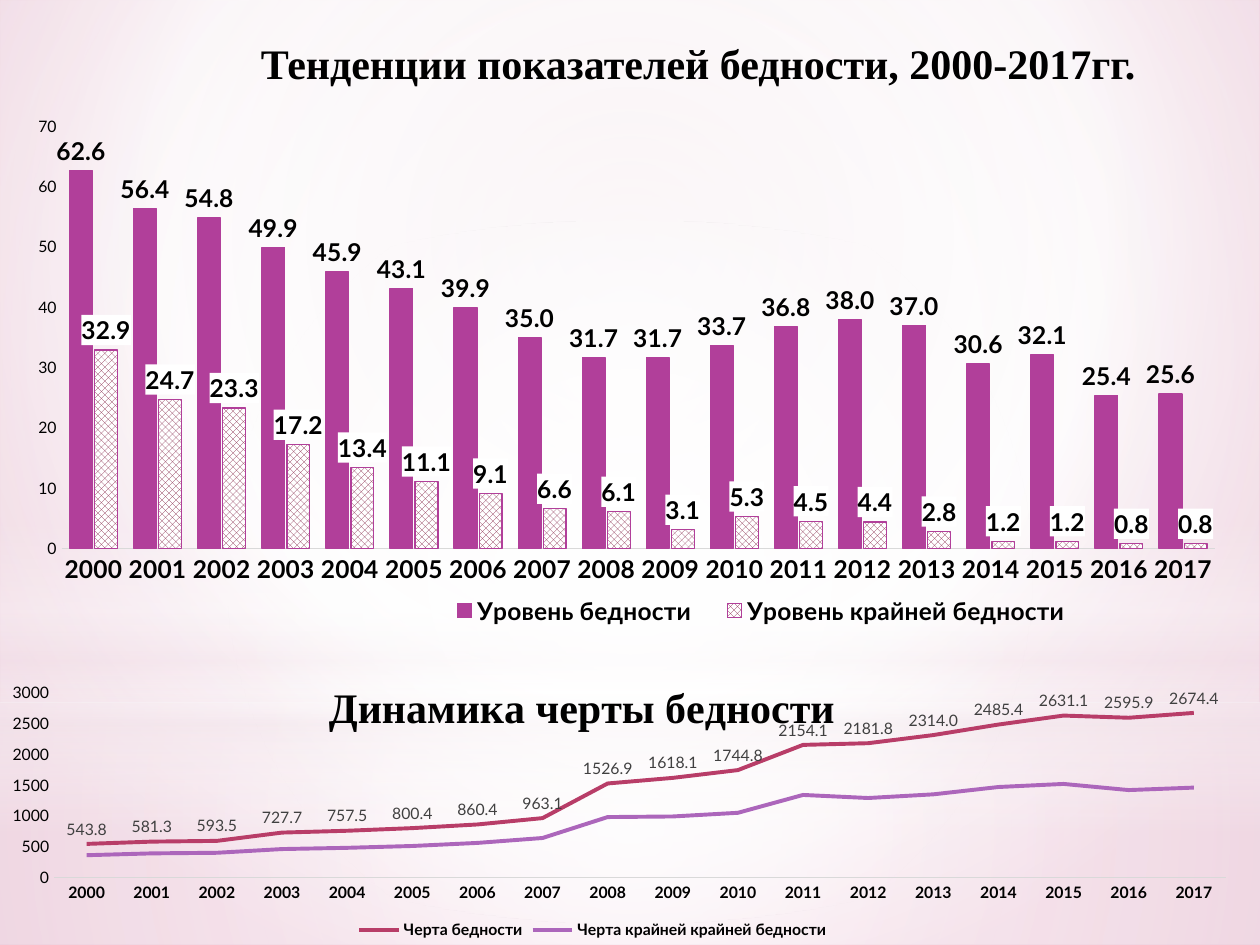
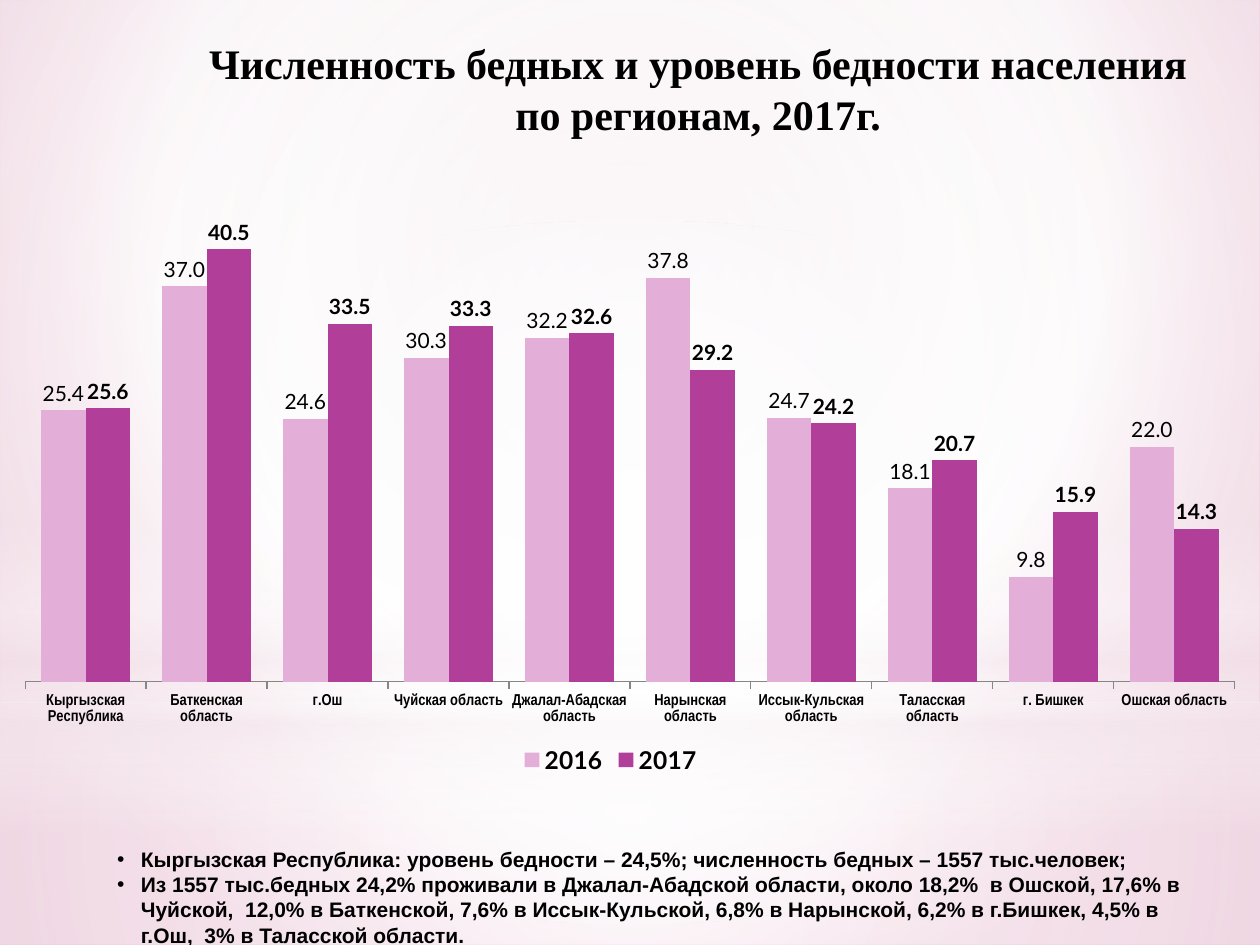
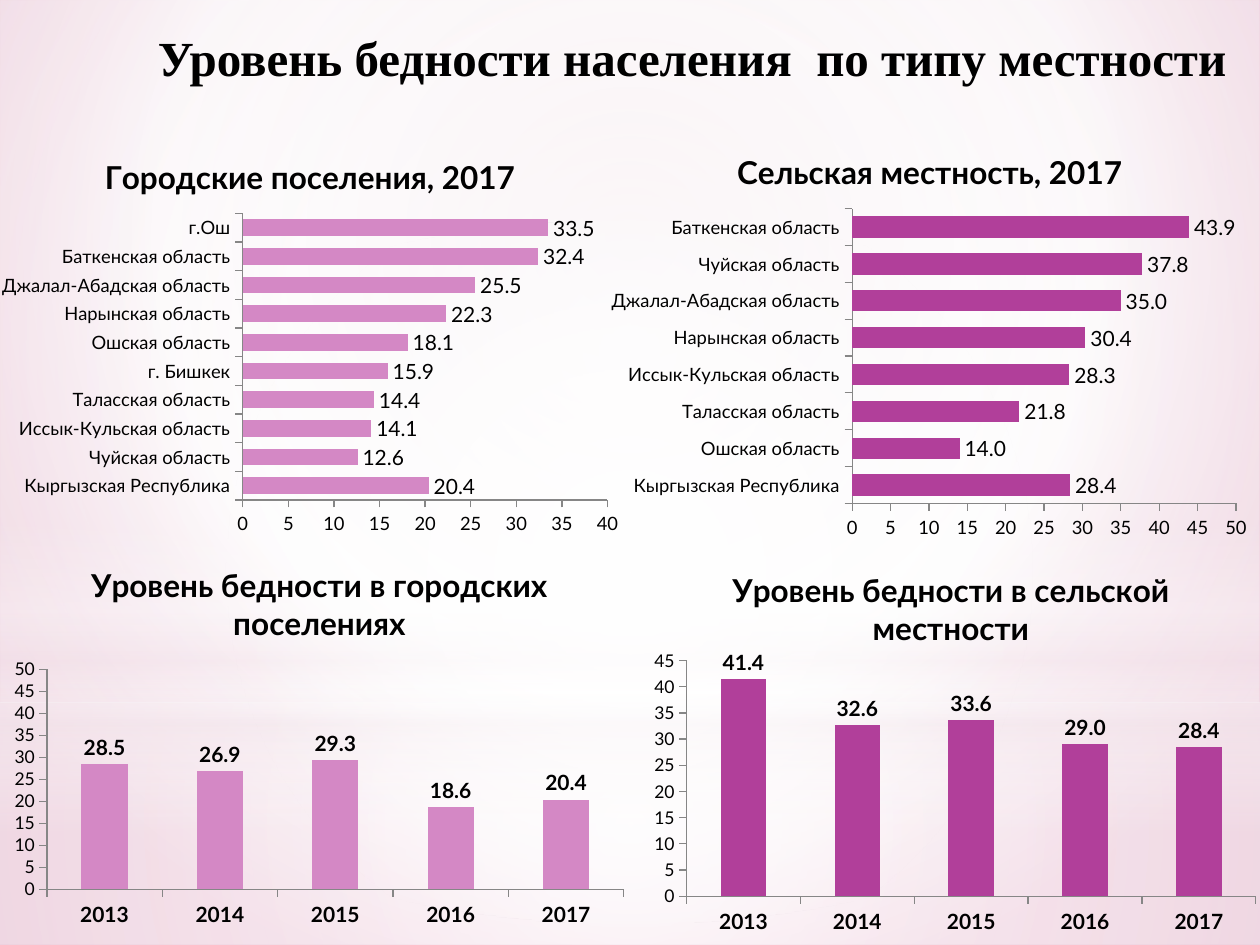
from lxml import etree
from pptx import Presentation
from pptx.chart.data import CategoryChartData
from pptx.dml.color import RGBColor
from pptx.enum.chart import (XL_CHART_TYPE, XL_LABEL_POSITION, XL_LEGEND_POSITION,
                             XL_TICK_LABEL_POSITION, XL_TICK_MARK)
from pptx.enum.shapes import MSO_SHAPE
from pptx.enum.text import MSO_ANCHOR, PP_ALIGN
from pptx.oxml.ns import qn
from pptx.util import Cm, Pt

BLACK = RGBColor(0x00, 0x00, 0x00)
WHITE = RGBColor(0xFF, 0xFF, 0xFF)
BLUSH = RGBColor(0xF4, 0xE7, 0xED)
ROSE = RGBColor(0xED, 0xDA, 0xE2)
PINK = RGBColor(0xE0, 0x9D, 0xBC)
PURPLE = RGBColor(0xB1, 0x3F, 0x9A)
ORCHID = RGBColor(0xD4, 0x88, 0xC5)
LILAC = RGBColor(0xE3, 0xAF, 0xD8)
WINE = RGBColor(0x8A, 0x2E, 0x4E)
CRIMSON = RGBColor(0xB8, 0x3D, 0x68)
VIOLET = RGBColor(0xAC, 0x66, 0xBB)
LABEL_GREY = RGBColor(0x40, 0x40, 0x40)
AXIS_GREY = RGBColor(0x86, 0x86, 0x86)
PALE_GREY = RGBColor(0xD9, 0xD9, 0xD9)

TITLE_FONT = "Times New Roman"
CHART_FONT = "Lato"
TITLE_BOX = (3.38, 0.64, 21.39, 2.34)
CENTRE = (50, 50, 50, 50)

COLUMN = XL_CHART_TYPE.COLUMN_CLUSTERED
BAR = XL_CHART_TYPE.BAR_CLUSTERED
LINE = XL_CHART_TYPE.LINE

KYRGYZ = "Кыргызская Республика"
BATKEN = "Баткенская область"
OSH_CITY = "г.Ош"
CHUY = "Чуйская область"
JALAL = "Джалал-Абадская область"
NARYN = "Нарынская область"
ISSYK = "Иссык-Кульская область"
TALAS = "Таласская область"
BISHKEK = "г. Бишкек"
OSH = "Ошская область"


def lengths(box):
    return [Cm(v) for v in box]


def sub(parent, tag, **attrs):
    return etree.SubElement(parent, qn(tag), {k: str(v) for k, v in attrs.items()})


def set_font(font, size, color=BLACK, bold=False, name=CHART_FONT):
    font.size, font.bold, font.name = Pt(size), bold, name
    font.color.rgb = color


def set_gradient(fill, root, stops, focus=None):
    """Fill with (position, colour, opacity) stops: circular round focus, else downwards."""
    fill.gradient()
    grad = root.find(".//" + qn("a:gradFill"))
    for child in list(grad):
        grad.remove(child)
    gs_list = sub(grad, "a:gsLst")
    for pos, color, opacity in stops:
        gs = sub(gs_list, "a:gs", pos=pos * 1000)
        clr = sub(gs, "a:srgbClr", val=color)
        sub(clr, "a:alpha", val=opacity * 1000)
    if focus:
        path = sub(grad, "a:path", path="circle")
        sub(path, "a:fillToRect", **{k: v * 1000 for k, v in zip("ltrb", focus)})
    else:
        sub(grad, "a:lin", ang=90 * 60000, scaled=0)


def add_backdrop(layout, s):
    """Draw the glow panels on s, then hand them to the layout that all slides share."""
    for ph in list(layout.placeholders):
        ph.element.getparent().remove(ph.element)
    set_gradient(layout.background.fill, layout.element,
                 [(0, ROSE, 100), (60, WHITE, 100), (100, PINK, 100)], (20, 10, 20, 60))
    panels = [
        (MSO_SHAPE.RECTANGLE, (0, 14.17, 25.4, 4.88),
         [(0, WHITE, 91), (37, WHITE, 76), (100, BLUSH, 79)], CENTRE),
        (MSO_SHAPE.RECTANGLE, (0, 0, 25.4, 14.17),
         [(0, WHITE, 89), (48, WHITE, 62), (100, BLUSH, 79)], CENTRE),
        (MSO_SHAPE.RECTANGLE, (0, 10.46, 25.4, 6.35),
         [(0, WHITE, 0), (29, WHITE, 30), (45, BLUSH, 40),
          (55, WHITE, 26), (65, BLUSH, 60), (100, WHITE, 0)], None),
        (MSO_SHAPE.OVAL, (0, 4.45, 25.4, 14.17), [(0, WHITE, 100), (56, WHITE, 0)], CENTRE),
    ]
    shapes = []
    for kind, box, stops, focus in panels:
        sp = s.shapes.add_shape(kind, *lengths(box))
        sp.shadow.inherit = False
        sp.line.fill.background()
        set_gradient(sp.fill, sp.element, stops, focus)
        shapes.append(sp)
    for sp in shapes:
        layout.shapes.element.append(sp.element)


def add_title(s, text, box=TITLE_BOX, size=24, align=PP_ALIGN.CENTER, anchor=MSO_ANCHOR.TOP):
    tf = s.shapes.add_textbox(*lengths(box)).text_frame
    tf.word_wrap, tf.vertical_anchor = True, anchor
    tf.text = text
    p = tf.paragraphs[0]
    p.alignment = align
    for r in p.runs:
        set_font(r.font, size, bold=True, name=TITLE_FONT)


def add_bullets(s, box, lines):
    tf = s.shapes.add_textbox(*lengths(box)).text_frame
    tf.word_wrap = True
    tf.text = "\n".join(lines)
    for p in tf.paragraphs:
        pPr = p._p.get_or_add_pPr()
        pPr.set("marL", str(Cm(0.48)))
        pPr.set("indent", str(Cm(-0.48)))
        sub(pPr, "a:buFont", typeface="Arial")
        sub(pPr, "a:buChar", char="•")
        for r in p.runs:
            set_font(r.font, 12, bold=True, name="Arial")


def place(part, x, y, w=None, h=None):
    """Fix a chart part at fractions of the chart's size."""
    for old in part.findall(qn("c:layout")):
        part.remove(old)
    layout = etree.Element(qn("c:layout"))
    manual = sub(layout, "c:manualLayout")
    if part.tag == qn("c:plotArea"):
        sub(manual, "c:layoutTarget", val="inner")
    sub(manual, "c:xMode", val="edge")
    sub(manual, "c:yMode", val="edge")
    for key, value in zip("xywh", (x, y, w, h)):
        if value is not None:
            sub(manual, "c:" + key, val=value)
    before = part.find(qn("c:legendPos"))
    if before is None:
        before = part.find(qn("c:tx"))
    if before is None:
        part.insert(0, layout)
    else:
        before.addnext(layout)


def add_chart(s, kind, box, cats, series, plot, gap=None, overlap=0):
    """Add a chart without frame or gridlines; series maps a name to (values, colour)."""
    data = CategoryChartData(number_format="0.0")
    data.categories = cats
    for name, (values, _) in series.items():
        data.add_series(name, values)
    chart = s.shapes.add_chart(kind, *lengths(box), data).chart
    set_font(chart.font, 10)
    chart.has_title = chart.has_legend = False
    root = chart._chartSpace.find(qn("c:chart"))
    area = root.find(qn("c:plotArea"))
    frame = etree.Element(qn("c:spPr"))
    sub(frame, "a:noFill")
    sub(sub(frame, "a:ln"), "a:noFill")
    root.addnext(frame)
    sub(sub(area, "c:spPr"), "a:noFill")
    place(area, *plot)
    chart.plots[0].vary_by_categories = False
    if kind != LINE:
        chart.plots[0].gap_width = gap
        chart.plots[0].overlap = overlap
    for ser, (_, color) in zip(chart.plots[0].series, series.values()):
        if kind == LINE:
            ser.smooth = False
            ser.format.line.width = Pt(2.25)
            ser.format.line.color.rgb = color
        else:
            ser.invert_if_negative = False
            ser.format.fill.solid()
            ser.format.fill.fore_color.rgb = color
    return chart


def set_axis(axis, size, bold=False, font=CHART_FONT, line=AXIS_GREY, tick=XL_TICK_MARK.OUTSIDE):
    axis.has_major_gridlines = False
    axis.major_tick_mark, axis.minor_tick_mark = tick, XL_TICK_MARK.NONE
    set_font(axis.tick_labels.font, size, bold=bold, name=font)
    if line is None:
        axis.format.line.fill.background()
    else:
        axis.format.line.color.rgb = line
        axis.format.line.width = Pt(0.75)


def set_scale(axis, top, step):
    axis.minimum_scale, axis.maximum_scale, axis.major_unit = 0, top, step
    axis.tick_labels.number_format = "0"
    axis.tick_labels.number_format_is_linked = False


def set_plain_axes(chart, cat_size, val_size, top, step):
    """Pale category line and bare value scale, without ticks."""
    set_axis(chart.category_axis, cat_size, True, line=PALE_GREY, tick=XL_TICK_MARK.NONE)
    set_axis(chart.value_axis, val_size, line=None, tick=XL_TICK_MARK.NONE)
    set_scale(chart.value_axis, top, step)


def add_labels(ser, size, bold=False, color=BLACK, position=XL_LABEL_POSITION.OUTSIDE_END):
    labels = ser.data_labels
    labels.show_value = True
    labels.number_format, labels.number_format_is_linked = "0.0", False
    labels.position = position
    set_font(labels.font, size, color, bold)
    return labels


def add_legend(chart, size, spot=None):
    chart.has_legend = True
    legend = chart.legend
    legend.position, legend.include_in_layout = XL_LEGEND_POSITION.BOTTOM, False
    set_font(legend.font, size, bold=True)
    if spot:
        place(legend._element, *spot)


def add_chart_title(chart, text, size=18, font=CHART_FONT):
    chart.has_title = True
    tf = chart.chart_title.text_frame
    tf.text = text
    set_font(tf.paragraphs[0].runs[0].font, size, bold=True, name=font)


def add_poverty_rates(s, box, years):
    rates = [62.6, 56.4, 54.8, 49.9, 45.9, 43.1, 39.9, 35.0, 31.7,
             31.7, 33.7, 36.8, 38.0, 37.0, 30.6, 32.1, 25.4, 25.6]
    extreme = [32.9, 24.7, 23.3, 17.2, 13.4, 11.1, 9.1, 6.6, 6.1,
               3.1, 5.3, 4.5, 4.4, 2.8, 1.2, 1.2, 0.8, 0.8]
    chart = add_chart(s, COLUMN, box, years,
                      {"Уровень бедности": (rates, PURPLE),
                       "Уровень крайней бедности": (extreme, WHITE)},
                      (0.04, 0.04, 0.94, 0.785), 71, -10)
    set_plain_axes(chart, 14, 9, 70, 10)
    add_legend(chart, 14, (0.34, 0.9, 0.54, 0.08))
    for ser in chart.plots[0].series:
        ser.format.line.color.rgb = PURPLE
        ser.format.line.width = Pt(0.75)
        labels = add_labels(ser, 14, True)
    fill = ser.format.fill
    fill.patterned()
    fill.fore_color.rgb, fill.back_color.rgb = WINE, WHITE
    ser._element.find(".//" + qn("a:pattFill")).set("prst", "openDmnd")
    patch = etree.Element(qn("c:spPr"))
    sub(sub(patch, "a:solidFill"), "a:srgbClr", val=WHITE)
    labels._element.find(qn("c:numFmt")).addnext(patch)


def add_poverty_lines(s, box, years):
    line = [543.8, 581.3, 593.5, 727.7, 757.5, 800.4, 860.4, 963.1, 1526.9,
            1618.1, 1744.8, 2154.1, 2181.8, 2314.0, 2485.4, 2631.1, 2595.9, 2674.4]
    extreme = [360, 390, 400, 460, 480, 510, 560, 640, 980,
               990, 1050, 1340, 1290, 1350, 1470, 1520, 1420, 1460]
    chart = add_chart(s, LINE, box, years,
                      {"Черта бедности": (line, CRIMSON),
                       "Черта крайней крайней бедности": (extreme, VIOLET)},
                      (0.083, 0.167, 0.908, 0.61))
    set_plain_axes(chart, 9, 9, 3000, 500)
    add_legend(chart, 9)
    add_labels(chart.plots[0].series[0], 9, color=LABEL_GREY, position=XL_LABEL_POSITION.ABOVE)
    add_chart_title(chart, "Динамика черты бедности", 24, TITLE_FONT)
    place(chart.chart_title._element, 0.29, 0.1)


def add_region_rates(s, box):
    regions = [KYRGYZ, BATKEN, OSH_CITY, CHUY, JALAL, NARYN, ISSYK, TALAS, BISHKEK, OSH]
    chart = add_chart(s, COLUMN, box, regions, {
        "2016": ([25.4, 37, 24.6, 30.3, 32.2, 37.8, 24.7, 18.1, 9.8, 22], LILAC),
        "2017": ([25.6, 40.5, 33.5, 33.3, 32.6, 29.2, 24.2, 20.7, 15.9, 14.3], PURPLE),
    }, (0.02, 0.02, 0.96, 0.803), 72)
    set_axis(chart.category_axis, 9, True, "Arial Narrow")
    chart.category_axis.tick_label_position = XL_TICK_LABEL_POSITION.LOW
    set_axis(chart.value_axis, 10)
    set_scale(chart.value_axis, 45, 5)
    chart.value_axis.visible = False
    add_legend(chart, 14, (0.41, 0.92))
    for ser, bold in zip(chart.plots[0].series, (False, True)):
        add_labels(ser, 12, bold)


def add_settlement_chart(s, kind, box, title, values, color, top, plot):
    """One-series chart of rates by region (bars) or by year (columns)."""
    bars = kind == BAR
    chart = add_chart(s, kind, box, list(values), {title: (list(values.values()), color)},
                      plot, 74 if bars else 150)
    set_axis(chart.category_axis, 10.5 if bars else 12, not bars)
    set_axis(chart.value_axis, 10.5 if bars else 10)
    set_scale(chart.value_axis, top, 5)
    add_labels(chart.plots[0].series[0], 12, not bars)
    add_chart_title(chart, title)


def trends_slide(s):
    years = [str(y) for y in range(2000, 2018)]
    add_poverty_rates(s, (0.25, 2.11, 24.74, 10.85), years)
    add_title(s, "Тенденции показателей бедности, 2000-2017гг.")
    add_poverty_lines(s, (-1.07, 12.95, 26.03, 6.1), years)


def regions_slide(s):
    add_title(s, "Численность бедных и уровень бедности населения\vпо регионам, 2017г.")
    add_bullets(s, (2.11, 16.94, 22.23, 2.82), [
        "Кыргызская Республика: уровень бедности – 24,5%; численность бедных – 1557 тыс.человек;",
        "Из 1557 тыс.бедных 24,2% проживали в Джалал-Абадской области, около 18,2%  в Ошской, "
        "17,6% в Чуйской,  12,0% в Баткенской, 7,6% в Иссык-Кульской, 6,8% в Нарынской, "
        "6,2% в г.Бишкек, 4,5% в г.Ош,  3% в Таласской области.",
    ])
    add_region_rates(s, (0, 3.81, 25.4, 12.07))


def settlements_slide(s):
    add_title(s, "Уровень бедности населения  по типу местности", (2.74, 0.2, 22.23, 1.9),
              28, PP_ALIGN.RIGHT, MSO_ANCHOR.MIDDLE)
    urban = {KYRGYZ: 20.4, CHUY: 12.6, ISSYK: 14.1, TALAS: 14.4, BISHKEK: 15.9,
             OSH: 18.1, NARYN: 22.3, JALAL: 25.5, BATKEN: 32.4, OSH_CITY: 33.5}
    rural = {KYRGYZ: 28.4, OSH: 14, TALAS: 21.8, ISSYK: 28.3,
             NARYN: 30.4, JALAL: 35, CHUY: 37.8, BATKEN: 43.9}
    years = [str(y) for y in range(2013, 2018)]
    urban_years = dict(zip(years, [28.5, 26.9, 29.3, 18.6, 20.4]))
    rural_years = dict(zip(years, [41.4, 32.6, 33.6, 29.0, 28.4]))
    add_settlement_chart(s, BAR, (-0.2, 2.69, 12.9, 8.26), "Городские поселения, 2017",
                         urban, ORCHID, 40, (0.395, 0.195, 0.57, 0.7))
    add_settlement_chart(s, BAR, (12.07, 2.59, 13.34, 8.43), "Сельская местность, 2017",
                         rural, PURPLE, 50, (0.383, 0.192, 0.58, 0.705))
    add_settlement_chart(s, COLUMN, (0.05, 10.92, 12.78, 7.92),
                         "Уровень бедности в городских поселениях",
                         urban_years, ORCHID, 50, (0.07, 0.325, 0.91, 0.56))
    add_settlement_chart(s, COLUMN, (12.78, 11.02, 12.78, 8.03),
                         "Уровень бедности в сельской местности",
                         rural_years, PURPLE, 45, (0.083, 0.286, 0.898, 0.592))


def main():
    prs = Presentation()
    prs.slide_width, prs.slide_height = Cm(25.4), Cm(19.05)
    blank = prs.slide_layouts[6]
    builders = (trends_slide, regions_slide, settlements_slide)
    slides = [prs.slides.add_slide(blank) for _ in builders]
    add_backdrop(blank, slides[0])
    for build, s in zip(builders, slides):
        build(s)
    prs.save("out.pptx")


if __name__ == "__main__":
    main()
